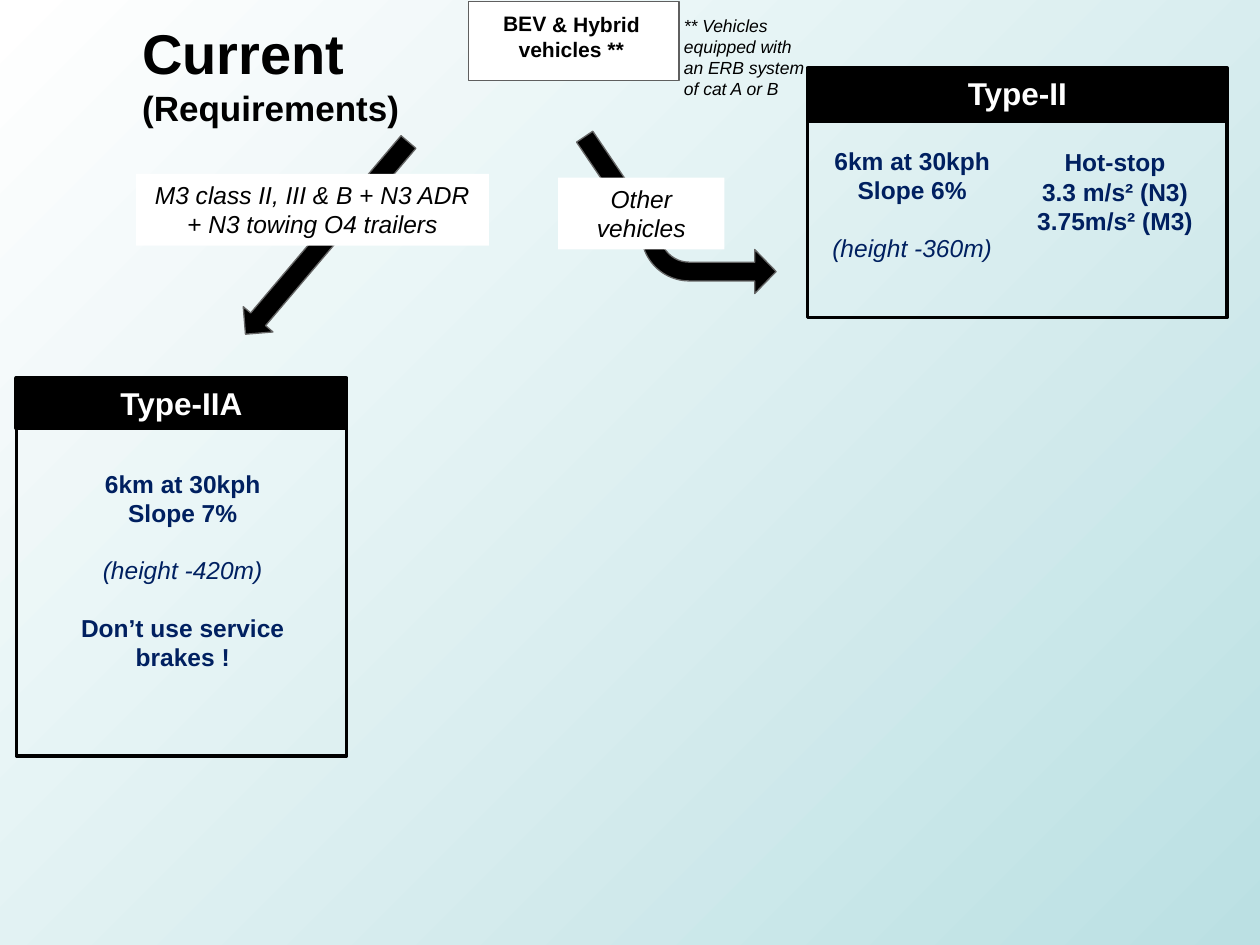
from dataclasses import dataclass

from pptx import Presentation
from pptx.dml.color import RGBColor
from pptx.enum import shapes, text
from pptx.util import Inches, Pt

BLACK = RGBColor(0x00, 0x00, 0x00)
WHITE = RGBColor(0xFF, 0xFF, 0xFF)
TEAL = RGBColor(0xBB, 0xE0, 0xE3)
NAVY = RGBColor(0x00, 0x20, 0x60)
GREY = RGBColor(0x66, 0x66, 0x66)
FRAME_GREY = RGBColor(0x5F, 0x5F, 0x5F)

LEFT, CENTER = text.PP_ALIGN.LEFT, text.PP_ALIGN.CENTER
SHAPE = shapes.MSO_SHAPE
Box = tuple[float, float, float, float]


@dataclass
class Line:
    """One paragraph of text and its format."""
    words: str
    size: float = 14
    color: RGBColor = BLACK
    bold: bool = False
    italic: bool = False
    before: float = 0


@dataclass
class Panel:
    """A headed frame with one or more blocks of text."""
    title: str
    header: Box
    frame: Box
    blocks: list[tuple[Box, list[Line]]]


def fact(words: str, before: float = 0) -> Line:
    return Line(words, color=NAVY, bold=True, before=before)


def height(words: str) -> Line:
    return Line(words, color=NAVY, italic=True, before=16)


PANELS = [
    Panel("Type-IIA", (0.13, 3, 2.62, 0.4), (0.13, 3.37, 2.62, 2.63), [
        ((0.49, 3.67, 1.92, 1.75), [
            fact("6km at 30kph"), fact("Slope 7%"), height("(height -420m)"),
            fact("Don’t use service brakes !", before=16)]),
    ]),
    Panel("Type-II", (6.41, 0.54, 3.33, 0.41), (6.41, 0.96, 3.33, 1.56), [
        ((6.5, 1.11, 1.48, 1.04), [
            fact("6km at 30kph"), fact("Slope 6%"), height("(height -360m)")]),
        ((8.08, 1.12, 1.54, 0.81), [
            fact("Hot-stop"), fact("3.3 m/s² (N3)"), fact("3.75m/s² (M3)")]),
    ]),
]


def write(tf, lines: list[Line], align=CENTER, inset: bool = True) -> None:
    tf.word_wrap = True
    tf.vertical_anchor = text.MSO_ANCHOR.TOP
    if not inset:
        for side in ("left", "top", "right", "bottom"):
            setattr(tf, f"margin_{side}", 0)
    for i, line in enumerate(lines):
        p = tf.add_paragraph() if i else tf.paragraphs[0]
        p.alignment = align
        if line.before:
            p.space_before = Pt(line.before)
        r = p.add_run()
        r.text = line.words
        font = {"name": "Arial", "size": Pt(line.size),
                "bold": line.bold, "italic": line.italic}
        for name, value in font.items():
            setattr(r.font, name, value)
        r.font.color.rgb = line.color


def add_text(parent, box: Box, lines: list[Line], align=CENTER, inset: bool = True):
    tb = parent.add_textbox(*map(Inches, box))
    write(tb.text_frame, lines, align, inset)
    return tb


def add_shape(parent, kind, box: Box, fill=None, line=None, width: float = 0.75,
              rotation: float = 0):
    sp = parent.add_shape(kind, *map(Inches, box))
    sp.shadow.inherit = False
    sp.rotation = rotation
    if fill is None:
        sp.fill.background()
    else:
        sp.fill.solid()
        sp.fill.fore_color.rgb = fill
    if line is None:
        sp.line.fill.background()
    else:
        sp.line.color.rgb = line
        sp.line.width = Pt(width)
    return sp


def add_label(parent, box: Box, words: str) -> None:
    sp = add_shape(parent, SHAPE.RECTANGLE, box, WHITE)
    write(sp.text_frame, [Line(words, italic=True)])


def add_panel(parent, panel: Panel) -> None:
    group = parent.add_group_shape().shapes
    header = add_shape(group, SHAPE.RECTANGLE, panel.header, BLACK, BLACK, 2.25)
    write(header.text_frame, [Line(panel.title, 18, WHITE, bold=True)])
    add_shape(group, SHAPE.RECTANGLE, panel.frame, line=BLACK, width=2)
    for box, lines in panel.blocks:
        add_text(group, box, lines)


def add_arrows(parent) -> None:
    add_shape(parent, SHAPE.DOWN_ARROW, (4.73, 1.01, 0.31, 0.87), BLACK, GREY,
              rotation=325.9)
    bent = add_shape(parent, SHAPE.BENT_ARROW, (5.09, 1.46, 1.07, 0.87), BLACK, GREY,
                     rotation=180)
    bent.element.spPr.xfrm.set("flipH", "1")
    for i, value in enumerate((0.171, 0.201, 0.195, 0.438)):
        bent.adjustments[i] = value
    add_shape(parent, SHAPE.DOWN_ARROW, (2.44, 0.89, 0.31, 2), BLACK, GREY,
              rotation=40.3)


def paint_background(s) -> None:
    fill = s.background.fill
    fill.gradient()
    fill.gradient_angle = 315
    for stop, color, position in zip(fill.gradient_stops, (WHITE, TEAL), (0, 1)):
        stop.color.rgb = color
        stop.position = position


def main() -> None:
    prs = Presentation()
    prs.slide_width, prs.slide_height = Inches(10), Inches(7.5)
    s = prs.slides.add_slide(prs.slide_layouts[6])
    paint_background(s)

    add_text(s.shapes, (1.03, 0.1, 2.24, 0.98),
             [Line("Current", 32, bold=True), Line("(Requirements)", 20, bold=True)],
             LEFT)
    add_arrows(s.shapes)
    add_label(s.shapes, (1.08, 1.38, 2.8, 0.57),
              "M3 class II, III & B + N3 ADR + N3 towing O4 trailers")

    add_shape(s.shapes, SHAPE.RECTANGLE, (3.72, 0.01, 1.67, 0.63), WHITE, FRAME_GREY)
    scope = add_text(s.shapes, (3.9, 0.09, 1.27, 0.34),
                     [Line("BEV & Hybrid vehicles **", 12, bold=True)], inset=False)
    scope.rotation = 0.5
    add_text(s.shapes, (5.33, 0.07, 1.17, 0.77),
             [Line("** Vehicles equipped with an ERB system of cat A or B", 10,
                   italic=True)], LEFT)

    for panel in PANELS:
        add_panel(s.shapes, panel)
    add_label(s.shapes, (4.43, 1.41, 1.32, 0.57), "Other vehicles")
    prs.save("out.pptx")


if __name__ == "__main__":
    main()
